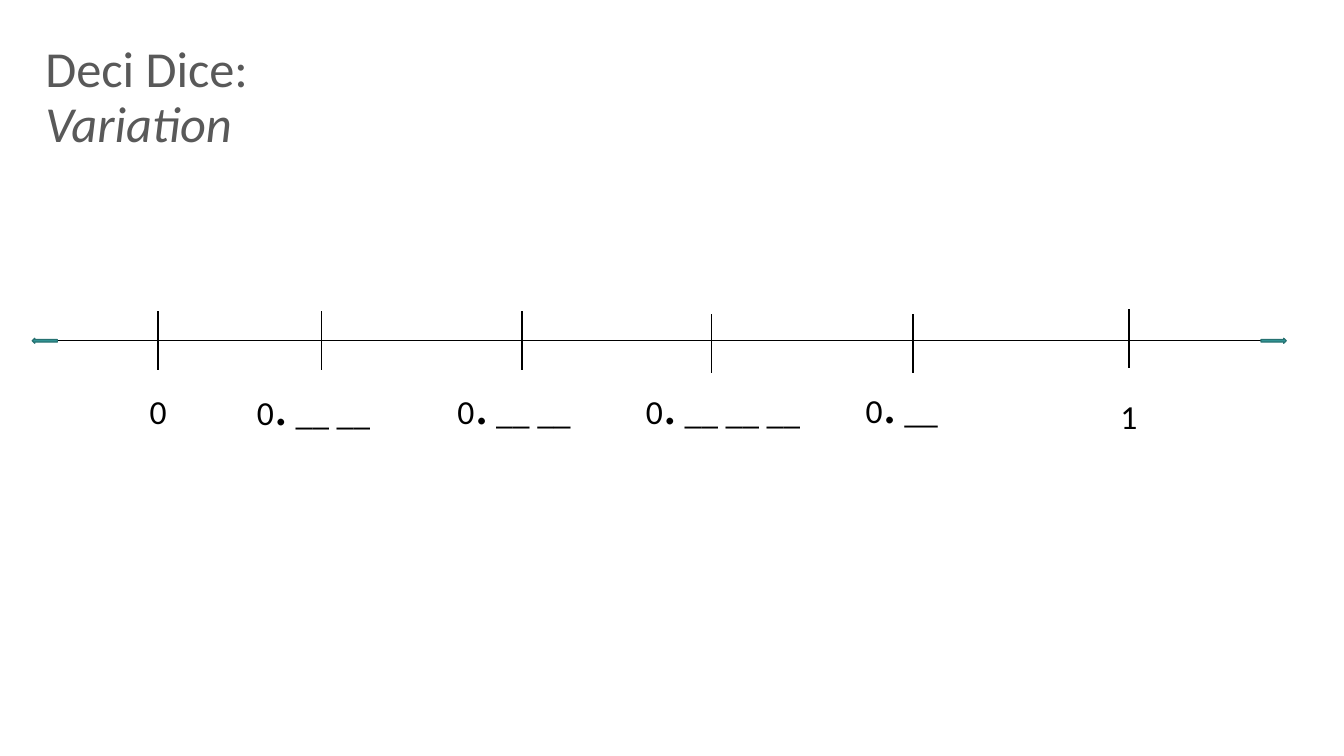
from collections import namedtuple
from dataclasses import dataclass

from lxml import etree
from pptx import Presentation
from pptx.dml.color import RGBColor
from pptx.enum import shapes, text
from pptx.oxml import ns
from pptx.util import Pt

Box = namedtuple("Box", "left top width height")
Mark = namedtuple("Mark", "x tick_top label label_left label_top label_width")


@dataclass(frozen=True)
class Theme:
    """Colours, font and type sizes of the slide."""
    font: str = "Calibri"
    ink: str = "000000"
    title: str = "595959"
    arrow: str = "339999"
    arrow_edge: str = "267171"
    title_size: float = 36
    label_size: float = 24
    point_size: float = 40


THEME = Theme()
TICK_HEIGHT = 41.8
AXIS_Y = 22.4
ARROW_WIDTH, ARROW_HEIGHT = 18, 3.6
MARKS = [
    Mark(90, 1.5, "0", 60, 54.8, 60),
    Mark(206.7, 1.5, "0. __ __", 153.4, 39.6, 106),
    Mark(350, 1.5, "0. __ __", 296.7, 38.9, 106),
    Mark(485.3, 3.6, "0. __ __ __", 431.3, 38.9, 128),
    Mark(629.3, 3.6, "0. __", 588.3, 38.2, 106),
    Mark(783.4, 0, "1", 753.4, 58.4, 60),
]


def style_span(span, size, colour):
    """Set the font, size and colour of a run."""
    span.font.name = THEME.font
    span.font.size = Pt(size)
    span.font.color.rgb = RGBColor.from_string(colour)


def add_line(page, x1, y1, x2, y2):
    """Draw a plain thin line."""
    line = page.shapes.add_connector(
        shapes.MSO_CONNECTOR.STRAIGHT, Pt(x1), Pt(y1), Pt(x2), Pt(y2))
    line.line.color.rgb = RGBColor.from_string(THEME.ink)
    line.line.width = Pt(1)
    etree.SubElement(line._element.spPr, ns.qn("a:effectLst"))


def add_title(page, box):
    """Write the two-line heading."""
    frame = page.shapes.add_textbox(*map(Pt, box)).text_frame
    frame.word_wrap = True
    frame.margin_left = frame.margin_right = Pt(9.4)
    frame.margin_top = frame.margin_bottom = Pt(9.4)
    frame.text = "Deci Dice:\nVariation"
    for para in frame.paragraphs:
        para.line_spacing = 0.9
        style_span(para.runs[0], THEME.title_size, THEME.title)
    frame.paragraphs[1].runs[0].font.italic = True


def add_label(page, box, label):
    """Write a number with an enlarged decimal point."""
    frame = page.shapes.add_textbox(*map(Pt, box)).text_frame
    frame.word_wrap = True
    frame.auto_size = text.MSO_AUTO_SIZE.SHAPE_TO_FIT_TEXT
    para = frame.paragraphs[0]
    whole, point, blanks = label.partition(".")
    if not point:
        para.alignment = text.PP_ALIGN.CENTER
    for part in filter(None, (whole, point, blanks)):
        span = para.add_run()
        span.text = part
        size = THEME.point_size if part == "." else THEME.label_size
        style_span(span, size, THEME.ink)


def add_arrow(page, box, rotation):
    """Draw a small arrow at an end of the number line."""
    arrow = page.shapes.add_shape(
        shapes.MSO_SHAPE.RIGHT_ARROW, *map(Pt, box))
    arrow.rotation = rotation
    arrow.shadow.inherit = False
    arrow.fill.solid()
    arrow.fill.fore_color.rgb = RGBColor.from_string(THEME.arrow)
    arrow.line.color.rgb = RGBColor.from_string(THEME.arrow_edge)
    arrow.line.width = Pt(0.85)


def add_number_line(page, box):
    """Draw the axis, its end arrows, the ticks and their labels."""
    axis = box.top + AXIS_Y
    right = box.left + box.width - ARROW_WIDTH
    add_line(page, box.left + 10.8, axis, right, axis)
    for left, rotation in ((box.left, 180), (right, 0)):
        add_arrow(page, Box(left, axis - ARROW_HEIGHT / 2,
                            ARROW_WIDTH, ARROW_HEIGHT), rotation)
    for mark in MARKS:
        x, top = box.left + mark.x, box.top + mark.tick_top
        add_line(page, x, top, x, top + TICK_HEIGHT)
        height = 55.4 if "." in mark.label else 36
        add_label(page, Box(box.left + mark.label_left,
                            box.top + mark.label_top,
                            mark.label_width, height), mark.label)


def main():
    """Build and save the slide."""
    deck = Presentation()
    deck.slide_width, deck.slide_height = Pt(960), Pt(540)
    page = deck.slides.add_slide(deck.slide_layouts[6])
    add_number_line(page, Box(23, 221, 895.7, 95))
    add_title(page, Box(23, 22.3, 216, 58.3))
    deck.save("out.pptx")


if __name__ == "__main__":
    main()
